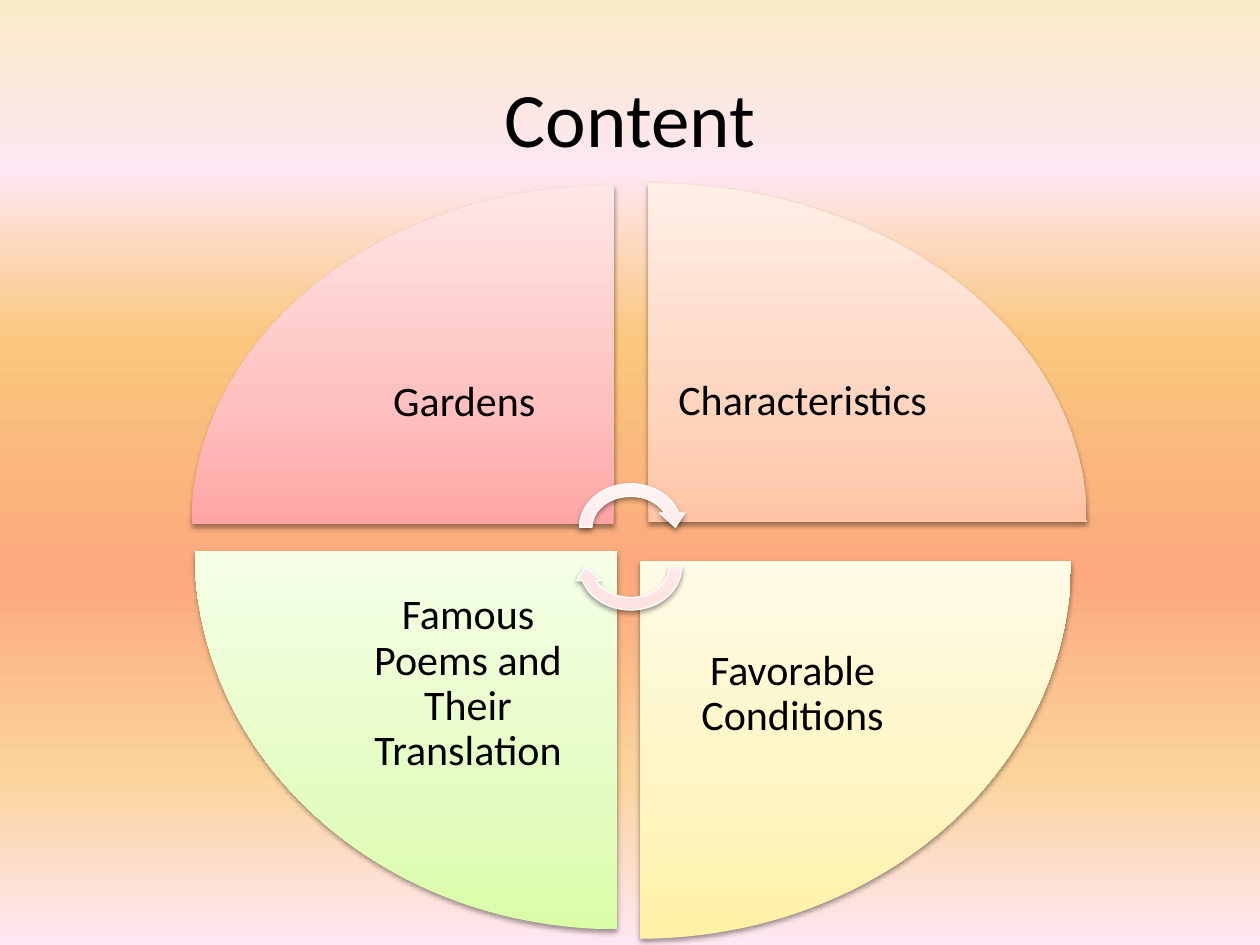
from dataclasses import dataclass

from lxml import etree
from pptx import Presentation
from pptx import util as u
from pptx.dml.color import RGBColor
from pptx.enum import shapes, text
from pptx.oxml.ns import qn

Box = tuple[float, float, float, float]
Stops = list[tuple[int, str]]


@dataclass(frozen=True)
class Theme:
    font: str = "Calibri"
    ink: str = "000000"
    edge: str = "FFFFFF"
    title: int = 44
    label: int = 24
    pad: float = 0.19
    marks: tuple = (0, 35, 100)
    arrow: tuple = ("FFDFDE", "FFE7E7", "FFF6F5")
    sky: tuple = ((0, "FBEAC7"), (18, "FEE7F2"), (36, "FAC77D"),
                  (61, "FBA97D"), (82, "FBD49C"), (100, "FEE7F2"))


@dataclass(frozen=True)
class Wedge:
    name: str
    box: Box
    turn: int
    label: Box
    tints: tuple


THEME = Theme()
WEDGES = [
    Wedge("Gardens", (1.52, 1.47, 3.35, 2.69), 0,
          (2.5, 2.25, 2.37, 1.9), ("FFA6A5", "FFC0BF", "FFE7E7")),
    Wedge("Characteristics", (5.54, 1.06, 2.69, 3.48), 90,
          (5.14, 2.24, 2.46, 1.9), ("FFC5A5", "FFD5BF", "FFEFE7")),
    Wedge("Favorable Conditions", (5.08, 4.45, 3.42, 3), 180,
          (5.08, 4.45, 2.42, 2.12), ("FFF2A5", "FEF5C0", "FFFBE7")),
    Wedge("Famous Poems and Their Translation", (1.72, 4.2, 3, 3.35), 270,
          (2.53, 4.37, 2.37, 2.12), ("DAFDA7", "E4FCC2", "F5FFE7")),
]


def place(box: Box) -> list:
    return [u.Inches(n) for n in box]


def add(node, tag: str, **attrs):
    return etree.SubElement(node, qn(tag), {k: str(v) for k, v in attrs.items()})


def blend(owner, fill, stops: Stops, angle: int) -> None:
    """Give a fill a gradient that stays upright when its shape turns."""
    fill.gradient()
    grad = next(owner.iter(qn("a:gradFill")))
    grad.set("rotWithShape", "0")
    for node in list(grad):
        grad.remove(node)
    row = add(grad, "a:gsLst")
    for mark, tint in stops:
        add(add(row, "a:gs", pos=mark * 1000), "a:srgbClr", val=tint)
    add(grad, "a:lin", ang=angle * 60000, scaled=0)


def shade(shape) -> None:
    shape.shadow.inherit = False
    glow = add(shape._element.spPr.find(qn("a:effectLst")), "a:outerShdw",
               blurRad=u.Pt(3.1), dist=u.Pt(1.6), dir=90 * 60000, rotWithShape=0)
    tint = add(glow, "a:srgbClr", val=THEME.ink)
    add(tint, "a:alpha", val=38000)


def draw(slide, kind, box: Box, turn: int, tints: tuple, edge: str = ""):
    shape = slide.shapes.add_shape(kind, *place(box))
    shape.rotation = turn
    blend(shape._element.spPr, shape.fill, list(zip(THEME.marks, tints)), 270)
    if edge:
        shape.line.color.rgb = RGBColor.from_string(edge)
        shape.line.width = u.Pt(0.75)
    else:
        shape.line.fill.background()
    shade(shape)


def write(slide, words: str, box: Box, *, size: int, pad: float = 0.1,
          lead: float = 1.0) -> None:
    frame = slide.shapes.add_textbox(*place(box)).text_frame
    frame.word_wrap = True
    frame.vertical_anchor = text.MSO_ANCHOR.MIDDLE
    frame.margin_left = frame.margin_right = u.Inches(pad)
    frame.margin_top = frame.margin_bottom = u.Inches(pad)
    para = frame.paragraphs[0]
    para.alignment = text.PP_ALIGN.CENTER
    para.line_spacing = lead
    run = para.add_run()
    run.text = words
    run.font.name = THEME.font
    run.font.size = u.Pt(size)
    run.font.color.rgb = RGBColor.from_string(THEME.ink)


def main() -> None:
    deck = Presentation()
    deck.slide_width, deck.slide_height = u.Inches(10), u.Inches(7.5)
    slide = deck.slides.add_slide(deck.slide_layouts[6])

    # Background and title
    blend(slide.element, slide.background.fill, list(THEME.sky), 90)
    write(slide, "Content", (0.5, 0.3, 9, 1.25), size=THEME.title)

    # Four quarters with their labels
    for part in WEDGES:
        draw(slide, shapes.MSO_SHAPE.PIE_WEDGE, part.box, part.turn, part.tints)
        write(slide, part.name, part.label, size=THEME.label,
              pad=THEME.pad, lead=0.9)

    # Cycle arrows in the middle
    for top, turn in ((3.79, 0), (4.1, 180)):
        draw(slide, shapes.MSO_SHAPE.CIRCULAR_ARROW, (4.55, top, 0.91, 0.79),
             turn, THEME.arrow, edge=THEME.edge)

    deck.save("out.pptx")


if __name__ == "__main__":
    main()
